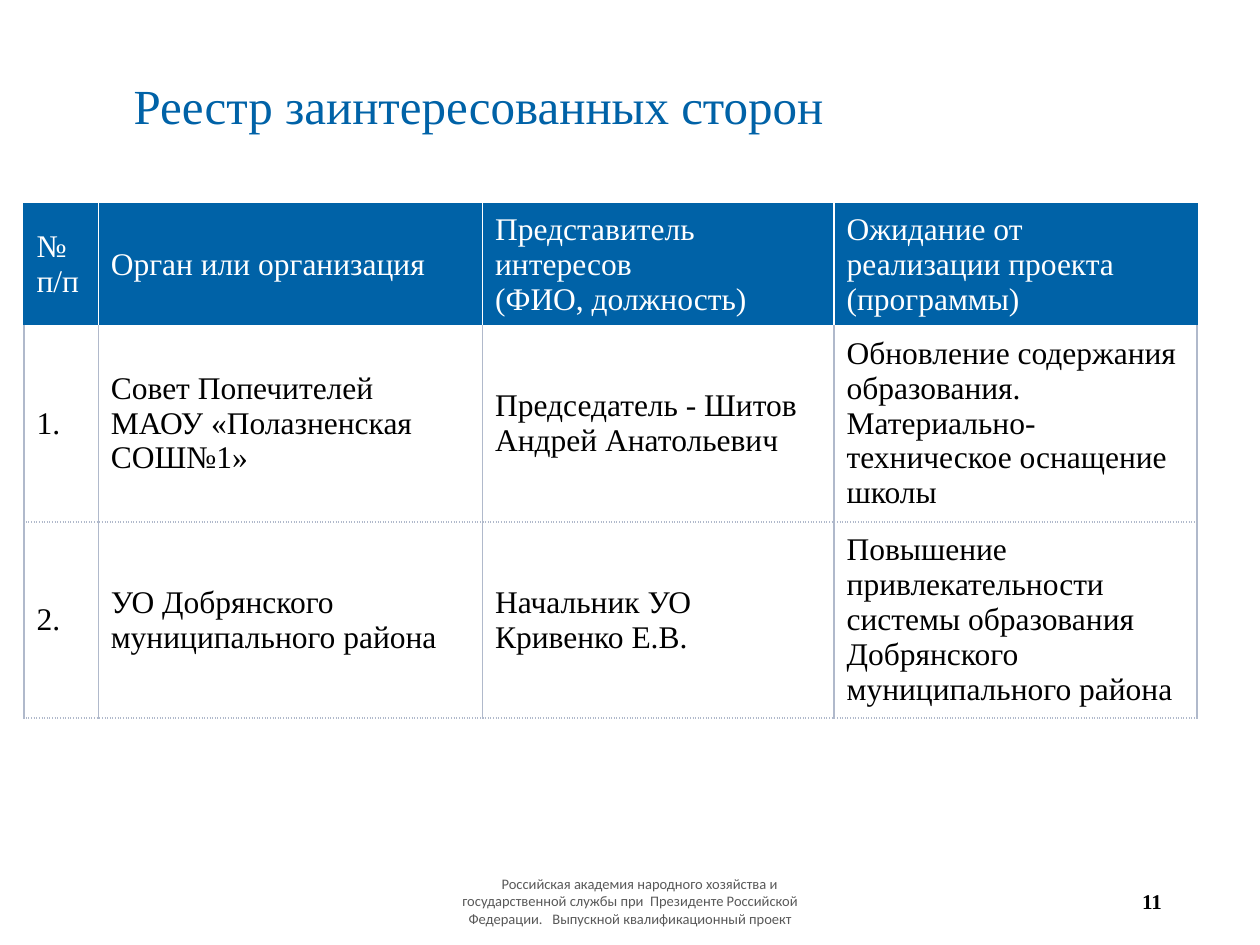
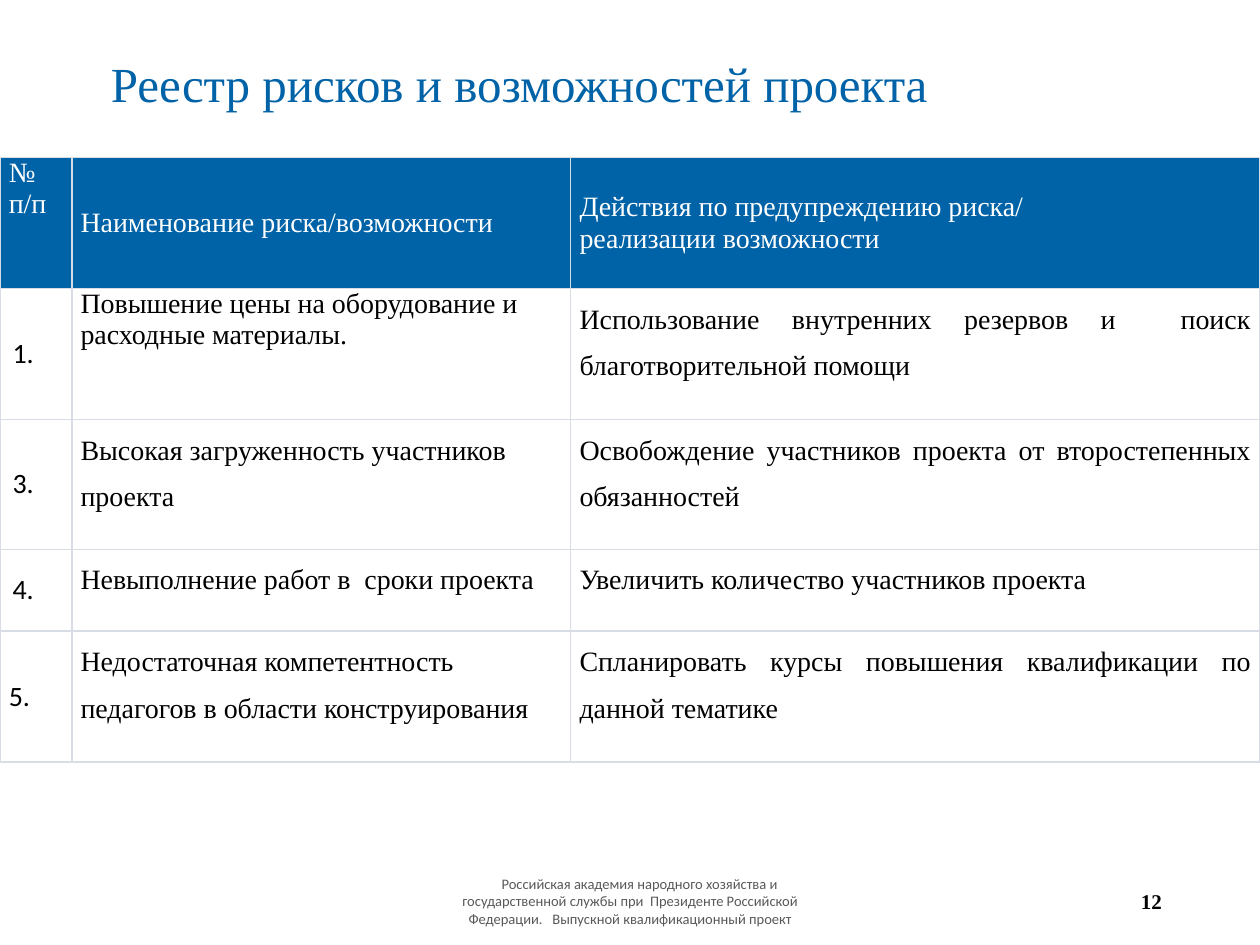
from lxml import etree
from pptx import Presentation
from pptx import util as u
from pptx.dml.color import RGBColor
from pptx.enum import text as t
from pptx.oxml import ns

BLUE = RGBColor(0x00, 0x62, 0xA7)
WHITE = RGBColor(0xFF, 0xFF, 0xFF)
BLACK = RGBColor(0x00, 0x00, 0x00)
FOOTER_GREY = RGBColor(0x59, 0x59, 0x59)
GRID_GREY = RGBColor(0xB0, 0xB9, 0xCB)
PALE_GREY = RGBColor(0xD8, 0xDC, 0xE5)

SERIF = "Times New Roman"
SANS = "Calibri"
TITLE_ONLY = 5
NO_STYLE = "{2D5ABB26-0587-4C30-8999-92F81FD0307C}"
NARROW = (0.07, 0)
NORMAL = (0.1, 0.03)
FOOTER = ("Российская академия народного хозяйства и государственной службы "
          "при  Президенте Российской Федерации.   Выпускной квалификационный проект")

STAKEHOLDERS = [
    ["№\nп/п", "Орган или организация",
     "Представитель интересов\v(ФИО, должность)",
     "Ожидание от реализации проекта (программы)"],
    ["1.", "Совет Попечителей МАОУ «Полазненская СОШ№1»",
     "Председатель - Шитов Андрей Анатольевич",
     "Обновление содержания образования. Материально-техническое оснащение школы"],
    ["2.", "УО Добрянского муниципального района",
     "Начальник УО Кривенко Е.В.",
     "Повышение привлекательности системы образования Добрянского муниципального района"],
]

RISKS = [
    ["№\nп/п", "Наименование риска/возможности",
     "Действия по предупреждению риска/\nреализации возможности"],
    ["1.", "Повышение цены на оборудование и расходные материалы.",
     "Использование внутренних резервов и  поиск благотворительной помощи"],
    ["3.", "Высокая загруженность участников проекта",
     "Освобождение участников проекта от второстепенных обязанностей"],
    ["4.", "Невыполнение работ в  сроки проекта",
     "Увеличить количество участников проекта"],
    ["5.", "Недостаточная компетентность педагогов в области конструирования",
     "Спланировать курсы повышения квалификации по данной тематике"],
]


def add_span(para, words, size, color, font=SERIF, bold=False):
    span = para.add_run()
    span.text = words
    span.font.size = u.Pt(size)
    span.font.name = font
    span.font.bold = bold
    span.font.color.rgb = color


def add_small_text(page, left, width, words, align, margin=0.1, indent=0, **style):
    box = page.shapes.add_textbox(u.Inches(left), u.Inches(6.95),
                                  u.Inches(width), u.Inches(0.4))
    frame = box.text_frame
    frame.word_wrap = True
    frame.vertical_anchor = t.MSO_ANCHOR.MIDDLE
    frame.margin_left = frame.margin_right = u.Inches(margin)
    para = frame.paragraphs[0]
    para.alignment = align
    if indent:
        para._p.get_or_add_pPr().set("indent", str(u.Inches(indent)))
    add_span(para, words, **style)


def add_page(deck, title, place, anchor, number):
    page = deck.slides.add_slide(deck.slide_layouts[TITLE_ONLY])
    head = page.shapes.title
    head.left, head.top, head.width, head.height = map(u.Inches, place)
    frame = head.text_frame
    frame.word_wrap = True
    frame.auto_size = t.MSO_AUTO_SIZE.NONE
    frame.vertical_anchor = anchor
    para = frame.paragraphs[0]
    para.alignment = t.PP_ALIGN.LEFT
    para.line_spacing = 0.9
    add_span(para, title, 28, BLUE)
    add_small_text(page, 3.31, 3.38, FOOTER, t.PP_ALIGN.CENTER, margin=0.15,
                   indent=0.15, size=8.3, color=FOOTER_GREY, font=SANS)
    add_small_text(page, 7.07, 2.25, str(number), t.PP_ALIGN.RIGHT,
                   size=12, color=BLACK, bold=True)
    return page


def add_grid(page, left, top, widths, heights):
    frame = page.shapes.add_table(len(heights), len(widths), u.Inches(left), u.Inches(top),
                                  u.Inches(sum(widths)), u.Inches(sum(heights)))
    table = frame.table
    table.first_row = table.horz_banding = False
    table._tbl.tblPr.find(ns.qn("a:tableStyleId")).text = NO_STYLE
    for column, width in zip(table.columns, widths):
        column.width = u.Inches(width)
    for row, height in zip(table.rows, heights):
        row.height = u.Inches(height)
    return table


def set_borders(cell, **sides):
    props = cell._tc.get_or_add_tcPr()
    for side in "LRTB":
        if side not in sides:
            continue
        color, width, dash = sides[side]
        line = etree.SubElement(props, ns.qn("a:ln" + side), w=str(u.Pt(width)))
        fill = etree.SubElement(line, ns.qn("a:solidFill"))
        etree.SubElement(fill, ns.qn("a:srgbClr"), val=str(color))
        etree.SubElement(line, ns.qn("a:prstDash"), val=dash)


def fill_cell(cell, words, size, header, font=SERIF, margins=NORMAL,
              anchor=t.MSO_ANCHOR.MIDDLE, align=None, spacing=None, after=None):
    cell.fill.solid()
    cell.fill.fore_color.rgb = BLUE if header else WHITE
    cell.vertical_anchor = anchor
    cell.margin_left = cell.margin_right = u.Inches(margins[0])
    cell.margin_top = cell.margin_bottom = u.Inches(margins[1])
    frame = cell.text_frame
    for index, line in enumerate(words.split("\n")):
        para = frame.add_paragraph() if index else frame.paragraphs[0]
        para.alignment = align
        para.line_spacing = spacing
        para.space_after = after
        for part_index, part in enumerate(line.split("\v")):
            if part_index:
                para.add_line_break()
            add_span(para, part, size, WHITE if header else BLACK, font)


def stakeholder_borders(row, column, last_column):
    dotted = (GRID_GREY, 1.5, "sysDot")
    if row == 0:
        edge, inner = (BLUE, 1, "solid"), (WHITE, 1, "solid")
        return {"L": inner if column else edge, "T": edge,
                "R": edge if column == last_column else inner}
    side = (GRID_GREY, 1, "solid")
    sides = {"L": side, "R": side, "B": dotted}
    if row > 1:
        sides["T"] = dotted
    return sides


def add_stakeholders(page):
    table = add_grid(page, 0.19, 1.62, [0.59, 3.05, 2.79, 2.88], [0.94, 1.48, 1.48])
    for row, entries in enumerate(STAKEHOLDERS):
        for column, words in enumerate(entries):
            cell = table.cell(row, column)
            set_borders(cell, **stakeholder_borders(row, column, len(entries) - 1))
            fill_cell(cell, words, 18, row == 0)


def risk_style(row, column):
    top = t.MSO_ANCHOR.TOP
    if row == 0:
        return {"margins": NARROW, "anchor": t.MSO_ANCHOR.MIDDLE if column else top}
    if column == 0:
        last = row == len(RISKS) - 1
        return {"font": SANS, "margins": NARROW if last else NORMAL}
    style = {"margins": NARROW, "anchor": top}
    if (row, column) != (1, 1):
        style.update(spacing=1.5, after=u.Pt(10))
    if column == 2:
        style["align"] = t.PP_ALIGN.JUSTIFY
    return style


def add_risks(page):
    table = add_grid(page, 0, 1.25, [0.57, 3.96, 5.47], [1.04, 1.04, 1.03, 0.65, 1.04])
    edge = (PALE_GREY, 1, "solid")
    for row, entries in enumerate(RISKS):
        for column, words in enumerate(entries):
            cell = table.cell(row, column)
            set_borders(cell, **dict.fromkeys("LRTB", edge))
            fill_cell(cell, words, 16, row == 0, **risk_style(row, column))


def main():
    deck = Presentation()
    deck.slide_width, deck.slide_height = u.Inches(10), u.Inches(7.5)
    add_stakeholders(add_page(deck, "Реестр заинтересованных сторон",
                              (0.96, 0.11, 7.42, 1.01), t.MSO_ANCHOR.BOTTOM, 11))
    add_risks(add_page(deck, "Реестр рисков и возможностей проекта",
                       (0.78, 0.24, 8.39, 0.9), t.MSO_ANCHOR.MIDDLE, 12))
    deck.save("out.pptx")


if __name__ == "__main__":
    main()
